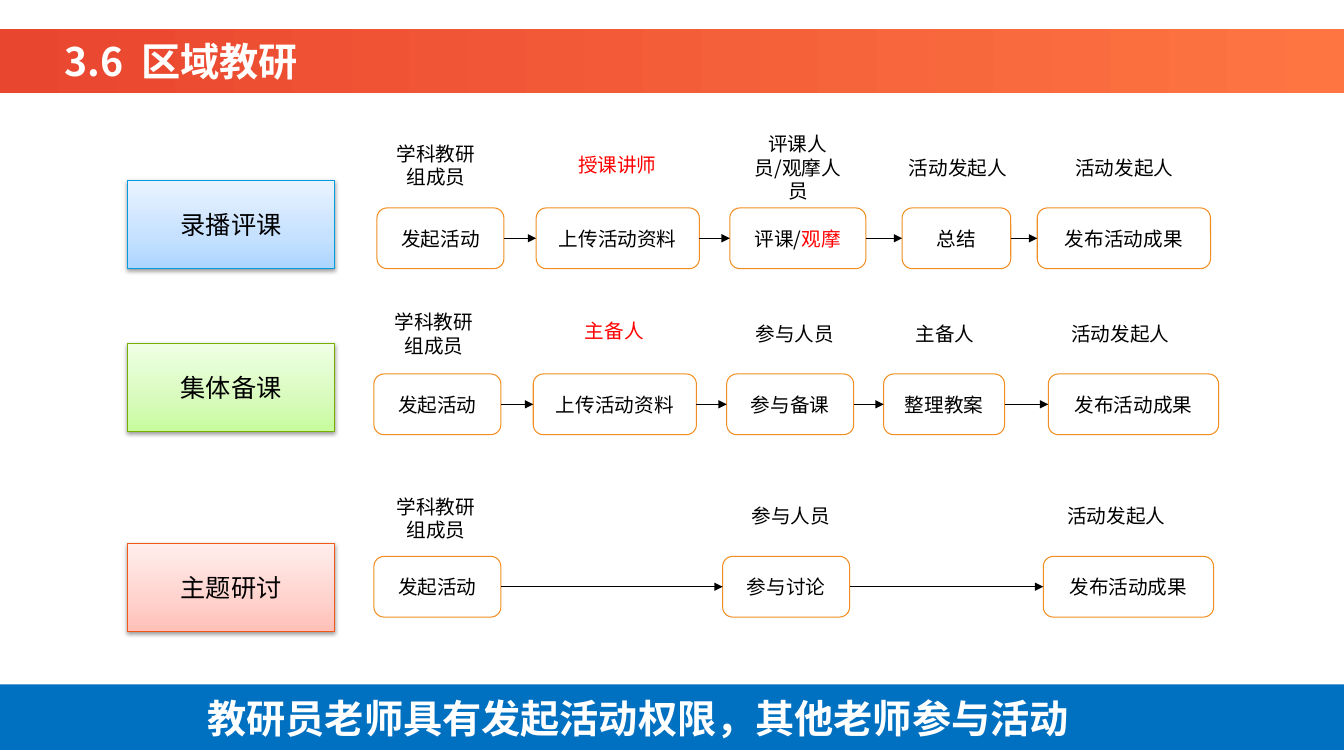
"""Build the slide on regional teaching research: three activity flows."""
import copy

import pptx
import pptx.dml.color
import pptx.enum.dml
import pptx.enum.shapes
import pptx.enum.text
import pptx.oxml
import pptx.oxml.ns
import pptx.util
from lxml import etree

Pt = pptx.util.Pt
RGB = pptx.dml.color.RGBColor.from_string
qn = pptx.oxml.ns.qn
SHAPE = pptx.enum.shapes.MSO_SHAPE
ALIGN = pptx.enum.text.PP_ALIGN

FONT = "Noto Sans CJK SC"
COLOURS = {
    "black": "000000", "white": "FFFFFF", "red": "FF0000",
    "orange": "F08E21", "footer": "0070C0",
}
HEADER_STOPS = [(0, "E9462F"), (1, "FE7542")]
STEP_HEIGHT = 43.4
SHADOW = (
    '<a:effectLst %s><a:outerShdw blurRad="40000" dist="20000" dir="5400000" '
    'rotWithShape="0"><a:srgbClr val="000000"><a:alpha val="38000"/></a:srgbClr>'
    "</a:outerShdw></a:effectLst>" % pptx.oxml.ns.nsdecls("a")
)

FLOWS = [
    {"name": "录播评课", "name_top": 128.9, "step_top": 148.5, "line": "019CDD",
     "stops": [(0, "ACD5FF"), (0.35, "C5E1FF"), (1, "E9F3FF")],
     "steps": [(269.3, 90.7, "发起活动", ""), (383, 116.6, "上传活动资料", ""),
               (521.3, 97.2, "评课/", "观摩"), (644.4, 77.6, "总结", ""),
               (740.9, 123.8, "发布活动成果", "")],
     "roles": [(311.4, 118.1, 84.2, "学科教研组成员", "black"),
               (441, 117.4, 84.2, "授课讲师", "red"),
               (569.9, 119.5, 84.2, "评课人员/观摩人员", "black"),
               (684.4, 119.5, 100.1, "活动发起人", "black"),
               (803.2, 119.5, 100.1, "活动发起人", "black")]},
    {"name": "集体备课", "name_top": 245.5, "step_top": 267.1, "line": "77AE00",
     "stops": [(0, "C7FC9D"), (0.35, "D7FBBB"), (1, "EFFFE4")],
     "steps": [(267.1, 90.7, "发起活动", ""), (380.9, 116.6, "上传活动资料", ""),
               (519.1, 90.7, "参与备课", ""), (631.2, 86.4, "整理教案", ""),
               (748.8, 121.7, "发布活动成果", "")],
     "roles": [(310, 238.3, 84.2, "学科教研组成员", "black"),
               (438.8, 236.2, 84.2, "主备人", "red"),
               (567.7, 238.3, 84.2, "参与人员", "black"),
               (675, 238.3, 100.1, "主备人", "black"),
               (800.3, 238.3, 100.1, "活动发起人", "black")]},
    {"name": "主题研讨", "name_top": 388.1, "step_top": 397.4, "line": "F35718",
     "stops": [(0, "FFC0B7"), (0.35, "FFD2CD"), (1, "FFEEEC")],
     "steps": [(267.1, 90.7, "发起活动", ""), (516.2, 90.7, "参与讨论", ""),
               (745.2, 121.7, "发布活动成果", "")],
     "roles": [(311.4, 370.1, 84.2, "学科教研组成员", "black"),
               (564.8, 368.6, 84.2, "参与人员", "black"),
               (797.4, 368.6, 100.1, "活动发起人", "black")]},
]


def add_box(page, kind, place, fill, line=None, angle=0):
    """Add a preset shape filled with one colour or a list of gradient stops."""
    box = page.shapes.add_shape(kind, *[Pt(length) for length in place])
    box.shadow.inherit = False
    if isinstance(fill, str):
        box.fill.solid()
        box.fill.fore_color.rgb = RGB(fill)
    else:
        box.fill.gradient()
        box.fill.gradient_angle = angle
        stop_list = box.element.find(".//" + qn("a:gsLst"))
        while len(stop_list) < len(fill):
            stop_list.append(copy.deepcopy(stop_list[-1]))
        for stop, (position, colour) in zip(box.fill.gradient_stops, fill):
            stop.position = position
            stop.color.rgb = RGB(colour)
    if line:
        box.line.color.rgb = RGB(line)
        box.line.width = Pt(0.75)
    else:
        box.line.fill.background()
    return box


def write(shape, text, size, colour, bold=False, align=ALIGN.CENTER):
    """Fill a shape with one formatted paragraph and return it."""
    frame = shape.text_frame
    frame.word_wrap = True
    frame.auto_size = pptx.enum.text.MSO_AUTO_SIZE.NONE
    frame.vertical_anchor = pptx.enum.text.MSO_ANCHOR.MIDDLE
    para = frame.paragraphs[0]
    para.alignment = align
    para.add_run().text = text
    para.font.size = Pt(size)
    para.font.bold = bold
    para.font.color.rgb = RGB(COLOURS[colour])
    para.font.name = FONT
    defaults = shape.element.find(".//" + qn("a:defRPr"))
    etree.SubElement(defaults, qn("a:ea")).set("typeface", FONT)
    return para


deck = pptx.Presentation()
deck.slide_width, deck.slide_height = Pt(960), Pt(540)
page = deck.slides.add_slide(deck.slide_layouts[5])

for flow in FLOWS:
    name_box = add_box(page, SHAPE.RECTANGLE, (91.1, flow["name_top"], 147.9, 62.8),
                       flow["stops"], flow["line"], angle=90)
    properties = name_box.element.spPr
    properties.replace(properties.find(qn("a:effectLst")), pptx.oxml.parse_xml(SHADOW))
    write(name_box, flow["name"], 18, "black")

    step_boxes = []
    for left, width, text, red_text in flow["steps"]:
        step_box = add_box(page, SHAPE.ROUNDED_RECTANGLE,
                           (left, flow["step_top"], width, STEP_HEIGHT),
                           COLOURS["white"], COLOURS["orange"])
        para = write(step_box, text, 14, "black")
        if red_text:
            span = para.add_run()
            span.text = red_text
            span.font.color.rgb = RGB(COLOURS["red"])
        step_boxes.append(step_box)

    for before, after in zip(step_boxes, step_boxes[1:]):
        arrow = page.shapes.add_connector(pptx.enum.shapes.MSO_CONNECTOR.STRAIGHT, 0, 0, 0, 0)
        arrow.begin_connect(before, 3)
        arrow.end_connect(after, 1)
        arrow.line.color.rgb = RGB(COLOURS["black"])
        arrow.line.width = Pt(0.75)
        properties = arrow.element.spPr
        etree.SubElement(properties.find(qn("a:ln")), qn("a:tailEnd")).set("type", "triangle")
        etree.SubElement(properties, qn("a:effectLst"))

    for centre, middle, width, text, colour in flow["roles"]:
        height = 41.8 if len(text) > 5 else 24.5
        role = page.shapes.add_textbox(Pt(centre - width / 2), Pt(middle - height / 2),
                                       Pt(width), Pt(height))
        write(role, text, 14, colour)

add_box(page, SHAPE.RECTANGLE, (0, 488.9, 960, 46.8), COLOURS["footer"])
footer = add_box(page, SHAPE.RECTANGLE, (20.2, 493.9, 871.2, 37.4), COLOURS["footer"])
write(footer, "教研员老师具有发起活动权限，其他老师参与活动", 28, "white", bold=True)

header = add_box(page, SHAPE.RECTANGLE, (0, 20.9, 960, 45.4), HEADER_STOPS)
title = page.shapes.title
title.left, title.top, title.width, title.height = Pt(38.9), Pt(23), Pt(741.6), Pt(41)
write(title, "3.6  区域教研", 28, "white", bold=True, align=ALIGN.LEFT)
header.element.addnext(title.element)

deck.save("out.pptx")
